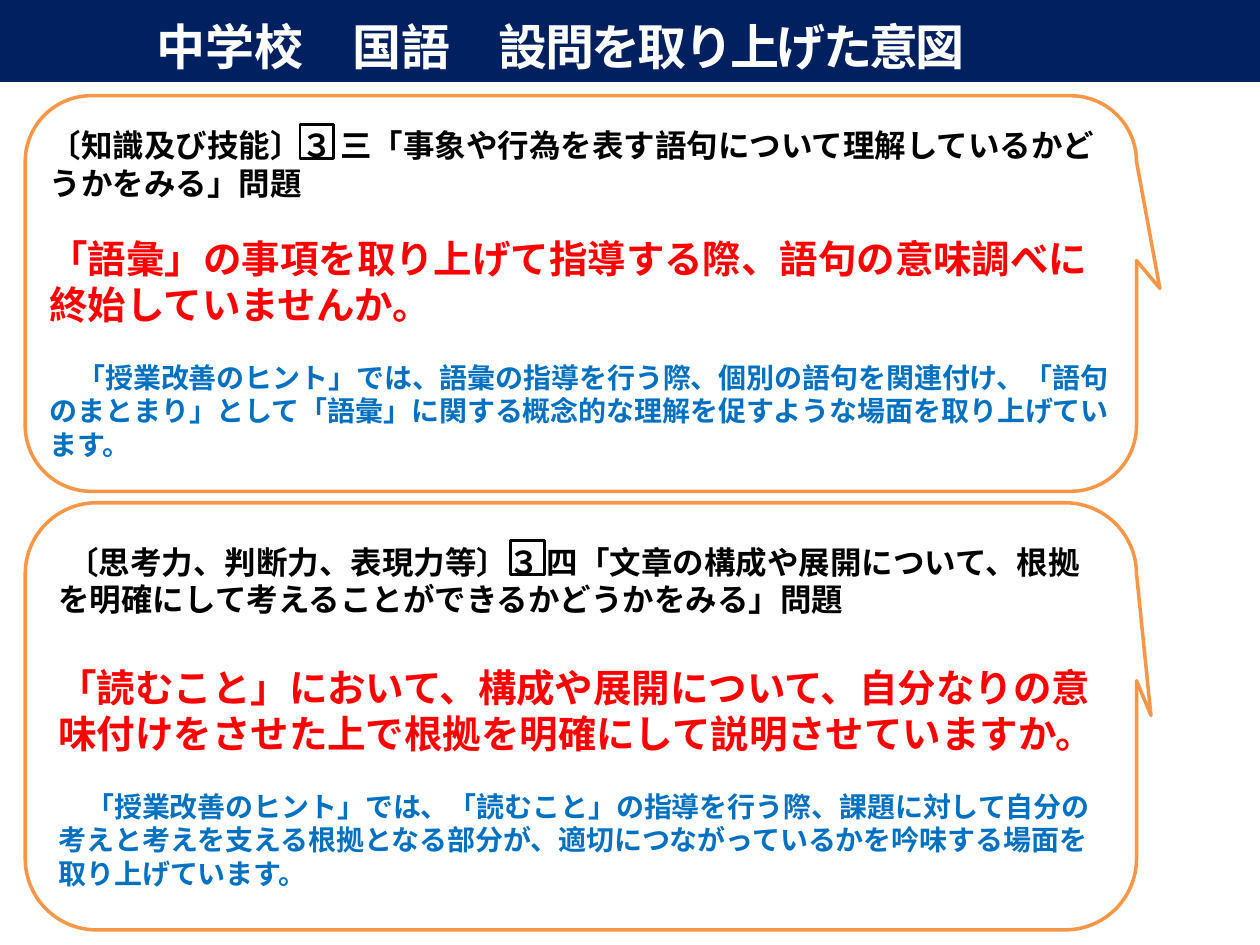
from dataclasses import dataclass

import pptx
import pptx.dml.color
import pptx.enum.shapes
import pptx.enum.text
import pptx.oxml
import pptx.oxml.ns
import pptx.util
from pptx.util import Inches

SHAPE = pptx.enum.shapes.MSO_SHAPE
ALIGN = pptx.enum.text.PP_ALIGN


@dataclass(frozen=True)
class Theme:
    font: str = "Noto Sans CJK JP"
    navy: str = "002060"
    white: str = "FFFFFF"
    black: str = "000000"
    orange: str = "F79646"
    red: str = "FF0000"
    blue: str = "0070C0"
    title: int = 28
    topic: int = 18
    question: int = 22
    hint: int = 16


THEME = Theme()


def rgb(color):
    return pptx.dml.color.RGBColor.from_string(color)


def add_block(page, kind, box, fill=None, line=None, width=1):
    block = page.shapes.add_shape(kind, *(Inches(value) for value in box))
    block.shadow.inherit = False
    if fill:
        block.fill.solid()
        block.fill.fore_color.rgb = rgb(fill)
    else:
        block.fill.background()
    if line:
        block.line.color.rgb = rgb(line)
        block.line.width = pptx.util.Pt(width)
    else:
        block.line.fill.background()
    return block


def set_frame(block, left, top, right, bottom):
    frame = block.text_frame
    frame.word_wrap = True
    frame.vertical_anchor = pptx.enum.text.MSO_ANCHOR.MIDDLE
    frame.margin_left, frame.margin_top = Inches(left), Inches(top)
    frame.margin_right, frame.margin_bottom = Inches(right), Inches(bottom)
    return frame


def style_span(span, size, color):
    span.font.size = pptx.util.Pt(size)
    span.font.bold = True
    span.font.name = THEME.font
    span.font.color.rgb = rgb(color)
    east_asian = pptx.oxml.parse_xml(
        f'<a:ea {pptx.oxml.ns.nsdecls("a")} typeface="{THEME.font}"/>')
    span.font._element.find(pptx.oxml.ns.qn("a:latin")).addnext(east_asian)


def add_title(page, box, lead, subject):
    # The wide right inset moves the centred title to the left
    frame = set_frame(add_block(page, SHAPE.RECTANGLE, box, THEME.navy),
                      0.1, 0.16, 1.2, 0.05)
    para = frame.paragraphs[0]
    para.alignment = ALIGN.CENTER
    for text in (lead, subject):
        span = para.add_run()
        span.text = text
        style_span(span, THEME.title, THEME.white)
    span.font._element.set("spc", "-150")


def add_callout(page, box, tail, inset, texts, gap, indent, number_at):
    # Speech bubble
    bubble = add_block(page, SHAPE.ROUNDED_RECTANGULAR_CALLOUT, box,
                       THEME.white, THEME.orange, 2)
    for index, value in enumerate((*tail, 0.167)):
        bubble.adjustments[index] = value

    # Topic, question and hint
    frame = set_frame(bubble, inset, 0.05, inset, 0.05)
    styles = (
        (THEME.topic, THEME.black, 0, indent),
        (THEME.question, THEME.red, gap, 0),
        (THEME.hint, THEME.blue, 19, 0.22),
    )
    frame.text = "\n".join(texts)
    for para, (size, color, before, first) in zip(frame.paragraphs, styles):
        para.alignment = ALIGN.LEFT
        if before:
            para.space_before = pptx.util.Pt(before)
        if first:
            para._p.get_or_add_pPr().set("indent", str(Inches(first)))
        style_span(para.runs[0], size, color)

    # Frame around the question number
    left, top = box[0] + number_at[0], box[1] + number_at[1]
    add_block(page, SHAPE.RECTANGLE, (left, top, 0.27, 0.27),
              line=THEME.black, width=1.5)


def main():
    deck = pptx.Presentation()
    deck.slide_width, deck.slide_height = Inches(10), Inches(7.5)
    page = deck.slides.add_slide(deck.slide_layouts[6])

    add_title(page, (0, -0.03, 10, 0.68), "中学校　国語　", "設問を取り上げた意図")
    add_callout(
        page, (0.2, 0.76, 8.82, 3.14), (0.521, -0.013), 0.04,
        ("〔知識及び技能〕３ 三「事象や行為を表す語句について理解しているかどうかをみる」問題",
         "「語彙」の事項を取り上げて指導する際、語句の意味調べに終始していませんか。",
         "「授業改善のヒント」では、語彙の指導を行う際、個別の語句を関連付け、"
         "「語句のまとまり」として「語彙」に関する概念的な理解を促すような場面を取り上げています。"),
        gap=19, indent=0, number_at=(2.18, 0.23))
    add_callout(
        page, (0.2, 3.99, 8.82, 3.39), (0.513, -0.002), 0.1,
        ("〔思考力、判断力、表現力等〕３ 四「文章の構成や展開について、"
         "根拠を明確にして考えることができるかどうかをみる」問題",
         "「読むこと」において、構成や展開について、自分なりの意味付けをさせた上で"
         "根拠を明確にして説明させていますか。",
         "「授業改善のヒント」では、「読むこと」の指導を行う際、課題に対して自分の考えと"
         "考えを支える根拠となる部分が、適切につながっているかを吟味する場面を取り上げています。"),
        gap=26, indent=0.07, number_at=(3.85, 0.3))

    deck.save("out.pptx")


if __name__ == "__main__":
    main()
